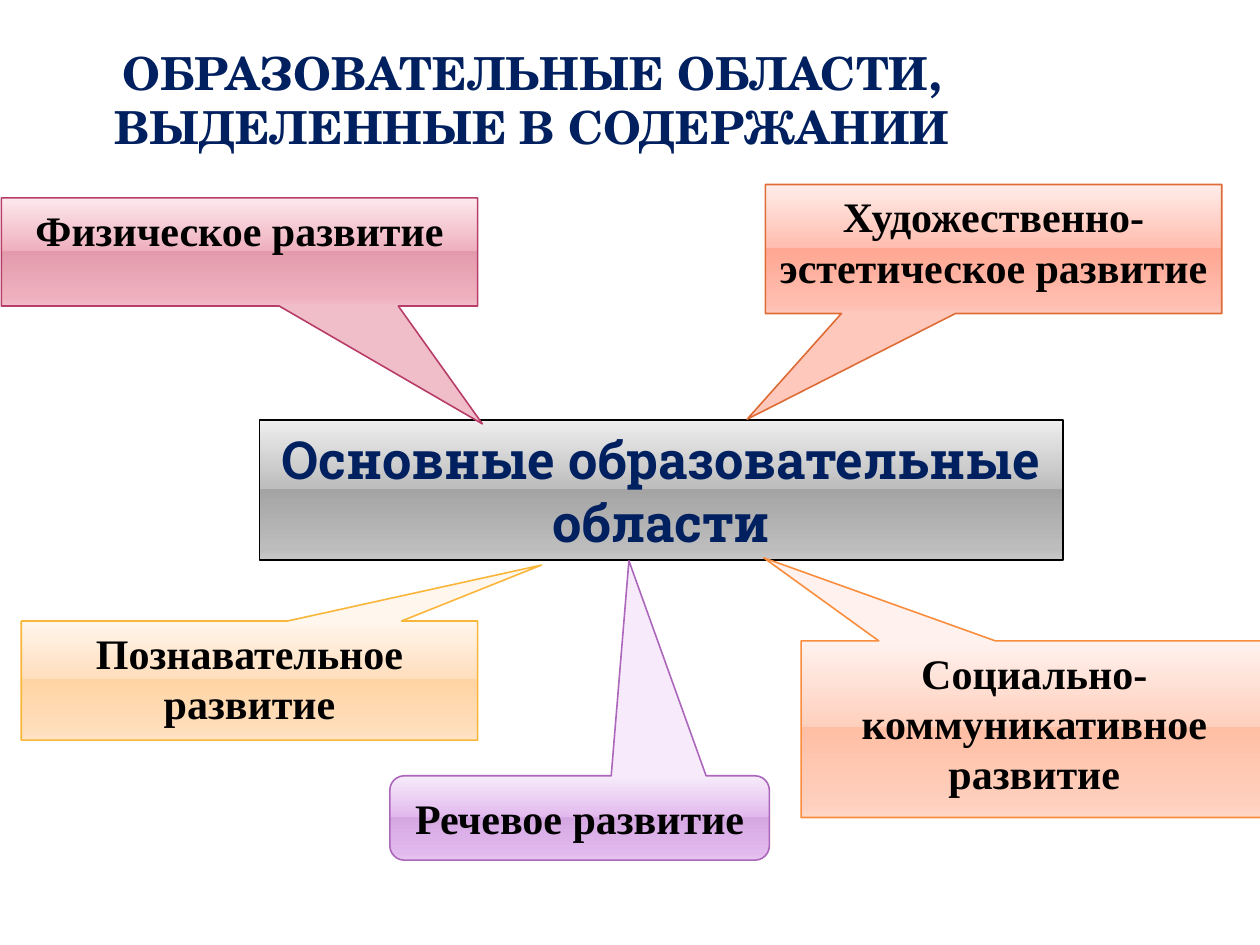
from lxml.etree import SubElement
from pptx import Presentation
from pptx.dml.color import RGBColor
from pptx.enum.shapes import MSO_SHAPE
from pptx.enum.text import MSO_ANCHOR, PP_ALIGN
from pptx.oxml.ns import qn
from pptx.util import Cm, Pt

RECT = MSO_SHAPE.RECTANGLE
CALL = MSO_SHAPE.RECTANGULAR_CALLOUT
ROUND = MSO_SHAPE.ROUNDED_RECTANGULAR_CALLOUT
TOP, MIDDLE, BOTTOM = MSO_ANCHOR.TOP, MSO_ANCHOR.MIDDLE, MSO_ANCHOR.BOTTOM
CENTER = PP_ALIGN.CENTER
NAVY = "002060"

AREAS = [
    ("Физическое развитие", CALL, (0.03, 3.99, 9.6, 2.18), (0.51, 1.59),
     "B83D68", ("FCE8ED", "EFB0BE", "E39BAC", "F0BEC9"), TOP),
    ("Познавательное развитие", CALL, (0.43, 12.52, 9.2, 2.4), (0.64, -0.97),
     "F9B639", ("FFF6ED", "FFDEBC", "FFD4A4", "FFE3C7"), TOP),
    ("Художественно-эстетическое развитие", CALL, (15.43, 3.72, 9.2, 2.6), (-0.54, 1.32),
     "DE6C36", ("FFEDEA", "FFBDAF", "FFA793", "FFC8BC"), TOP),
    ("Социально- коммуникативное развитие", CALL, (16.15, 12.92, 9.4, 3.56), (-0.58, -0.97),
     "FA8D3D", ("FFF2EE", "FFCFBD", "FFBFA5", "FFD7C8"), TOP),
    ("Речевое развитие", ROUND, (7.86, 15.64, 7.65, 1.7), (0.13, -3.05, 0.17),
     "AC66BB", ("F7EBFB", "E2B9ED", "D5A7E2", "E6C6EF"), MIDDLE),
]


def color(code):
    """Turn a hex string into a colour."""
    return RGBColor.from_string(code)


def write(shape, text, size=24, face="Times New Roman", ink="000000", anchor=TOP):
    """Put centred bold text into a shape."""
    frame = shape.text_frame
    frame.word_wrap = True
    frame.vertical_anchor = anchor
    line = frame.paragraphs[0]
    line.alignment = CENTER
    run = line.add_run()
    run.text = text
    font = run.font
    font.size, font.name, font.bold = Pt(size), face, True
    font.color.rgb = color(ink)
    return frame


def shade(shape, tints):
    """Fill a shape with a glossy vertical gradient."""
    light, mid, dark, end = tints
    shape.fill.gradient()
    shape.fill.gradient_angle = 270
    stops = shape._element.spPr.find(".//" + qn("a:gsLst"))
    stops.clear()
    for spot, tint in ((0, light), (49, mid), (49, dark), (92, mid), (100, end)):
        stop = SubElement(stops, qn("a:gs"), pos=str(spot * 1000))
        SubElement(stop, qn("a:srgbClr"), val=tint)


def panel(slide, kind, box, edge, tints, tail=()):
    """Add a glossy outlined shape, with its tail if it is a callout."""
    shape = slide.shapes.add_shape(kind, *map(Cm, box))
    shape.shadow.inherit = False
    shade(shape, tints)
    shape.line.color.rgb = color(edge)
    shape.line.width = Pt(0.9)
    for spot, value in enumerate(tail):
        shape.adjustments[spot] = value
    return shape


def head(slide, box):
    """Place the slide title."""
    title = slide.shapes.title
    title.left, title.top, title.width, title.height = map(Cm, box)
    frame = write(title, "ОБРАЗОВАТЕЛЬНЫЕ ОБЛАСТИ, ВЫДЕЛЕННЫЕ В СОДЕРЖАНИИ",
                  size=26, face="TeX Gyre Schola", ink=NAVY, anchor=BOTTOM)
    frame.margin_left = frame.margin_right = Cm(0.13)
    frame.margin_top = frame.margin_bottom = 0


def core(slide, box):
    """Place the central panel."""
    shape = panel(slide, RECT, box, "000000", ("EEEEEE", "BDBDBD", "A4A4A4", "C8C8C8"))
    write(shape, "Основные образовательные области",
          size=30, face="Roboto Slab", ink=NAVY, anchor=MIDDLE)


def area(slide, text, kind, box, tail, edge, tints, anchor):
    """Place one callout naming an area."""
    write(panel(slide, kind, box, edge, tints, tail), text, anchor=anchor)


def main():
    """Build and save the slide."""
    deck = Presentation()
    deck.slide_width, deck.slide_height = Cm(25.4), Cm(19.05)
    slide = deck.slides.add_slide(deck.slide_layouts[5])
    head(slide, (0.03, 0, 21.4, 3.1))
    core(slide, (5.23, 8.47, 16.2, 2.82))
    for item in AREAS:
        area(slide, *item)
    deck.save("out.pptx")


if __name__ == "__main__":
    main()
